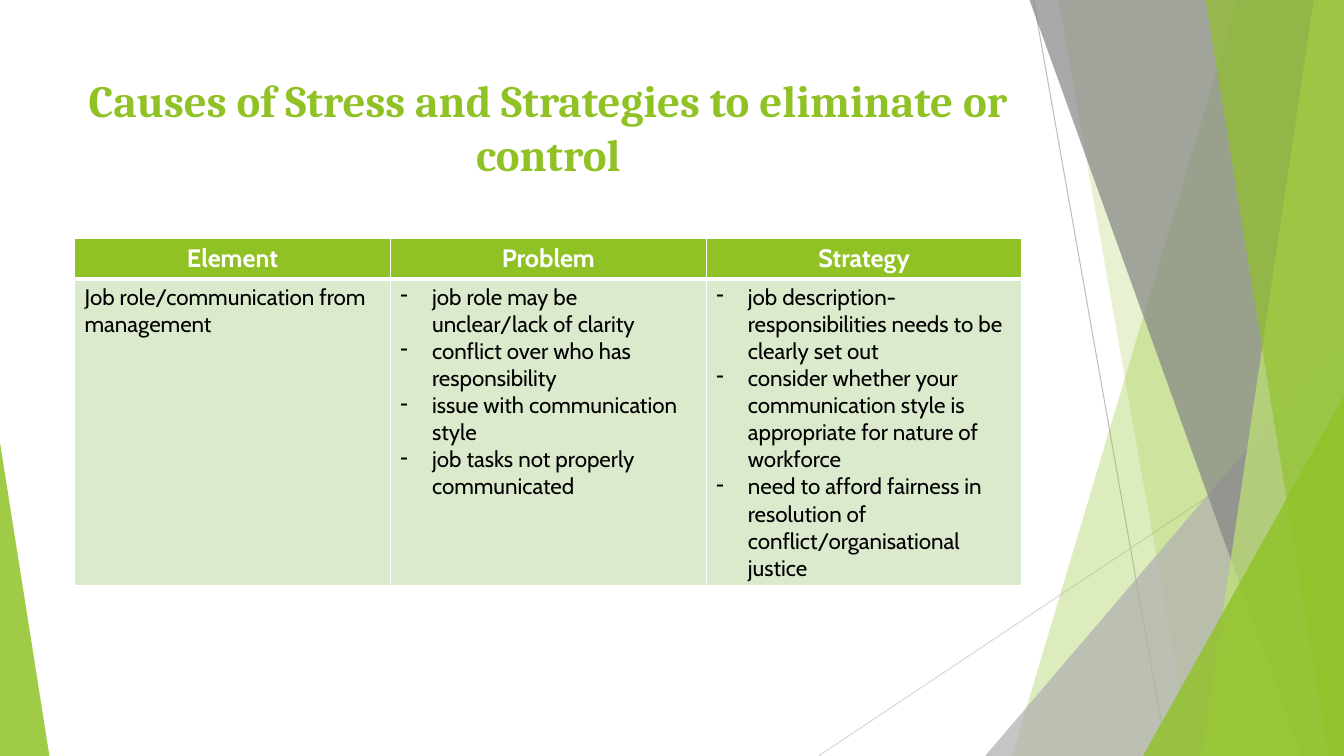
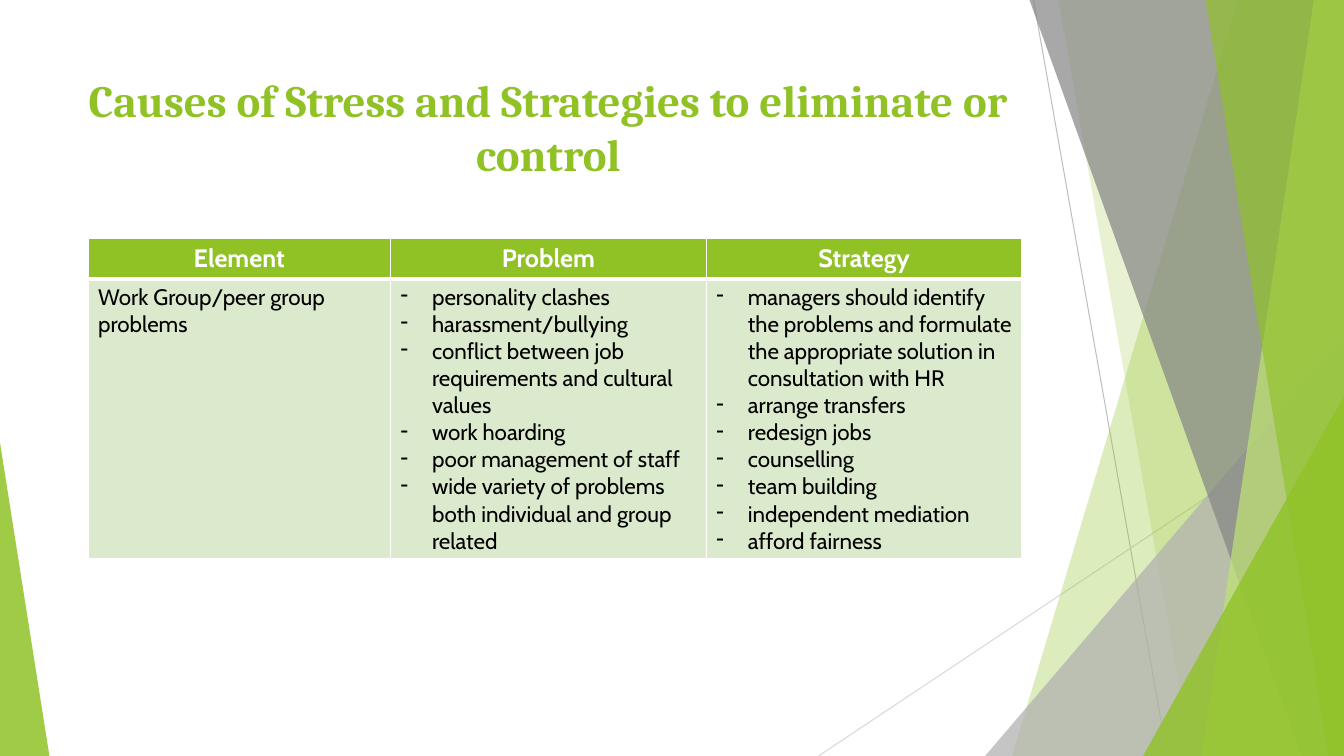
from dataclasses import dataclass

from lxml.etree import SubElement
from pptx import Presentation
from pptx.dml.color import RGBColor
from pptx.dml.fill import FillFormat
from pptx.enum.shapes import MSO_CONNECTOR, MSO_SHAPE
from pptx.enum.text import MSO_ANCHOR, PP_ALIGN
from pptx.oxml.ns import qn
from pptx.slide import Slide
from pptx.table import _Cell
from pptx.text.text import TextFrame
from pptx.util import Inches, Pt

WIDTH, HEIGHT = Inches(13.33), Inches(7.5)
GREEN, LIME, PALE = "90C226", "C0E474", "DBE9CD"
GREY, SILVER = "848484", "B0B0B0"
WHITE, BLACK = "FFFFFF", "000000"
TITLE_FONT, TABLE_FONT = "Cambria", "Cabin"

TITLE = "Causes of Stress and Strategies to eliminate or control"
HEADINGS = ("Element", "Problem", "Strategy")
TITLE_LEFT, TITLE_TOP, TITLE_WIDTH, TITLE_HEIGHT = 5.55, 8.93, 70.5, 19.2
TABLE_RIGHT, TABLE_TOP, HEADING_HEIGHT = 76.05, 31.5, 5.4
COLUMN_WIDTH, BULLET_INDENT = 23.5, 2.35


@dataclass(frozen=True)
class Ray:
    x1: float
    y1: float
    x2: float
    y2: float
    color: str


@dataclass(frozen=True)
class Band:
    top_x: float
    bottom_x: float
    color: str
    opacity: int


@dataclass(frozen=True)
class Wedge:
    left: float
    right: float
    top: float
    apex: float
    color: str
    opacity: int


@dataclass(frozen=True)
class Topic:
    element: str
    problems: tuple[str, ...]
    strategies: tuple[str, ...]
    first_width: float
    body_height: float


RAYS = (
    Ray(76.9, 0, 86.85, 100, "BFBFBF"),
    Ray(100, 53.7, 60.9, 100, "D9D9D9"),
)
FACETS = (
    Band(92.1, 75.3, GREEN, 30),
    Band(78.75, 88.65, GREEN, 20),
    Wedge(73.3, 100, 44.4, 1, SILVER, 72),
    Band(76.6, 96.85, GREY, 70),
    Band(97.75, 89.4, LIME, 70),
    Band(89.7, 98.85, GREEN, 65),
    Wedge(85.05, 100, 52.4, 1, GREEN, 80),
    Wedge(0, 3.68, 58.53, 0, GREEN, 85),
)
TOPICS = (
    Topic(
        "Job role/communication from management",
        (
            "job role may be unclear/lack of clarity",
            "conflict over who has responsibility",
            "issue with communication style",
            "job tasks not properly communicated",
        ),
        (
            "job description- responsibilities needs to be clearly set out",
            "consider whether your communication style is appropriate for nature of workforce",
            "need to afford fairness in resolution of conflict/organisational justice",
        ),
        first_width=23.5,
        body_height=40.5,
    ),
    Topic(
        "Work Group/peer group problems",
        (
            "personality clashes",
            "harassment/bullying",
            "conflict between job requirements and cultural values",
            "work hoarding",
            "poor management of staff",
            "wide variety of problems both individual and group related",
        ),
        (
            "managers should identify the problems and formulate the appropriate solution in consultation with HR",
            "arrange transfers",
            "redesign jobs",
            "counselling",
            "team building",
            "independent mediation",
            "afford fairness",
        ),
        first_width=22.5,
        body_height=37,
    ),
)


def across(percent: float) -> int:
    return round(WIDTH * percent / 100)


def down(percent: float) -> int:
    return round(HEIGHT * percent / 100)


def paint(fill: FillFormat, color: str, opacity: int = 100) -> None:
    fill.solid()
    fill.fore_color.rgb = RGBColor.from_string(color)
    if opacity < 100:
        choice = fill._xPr.find(qn("a:solidFill"))
        SubElement(choice[0], qn("a:alpha"), val=str(opacity * 1000))


def write(
    frame: TextFrame,
    texts: tuple[str, ...],
    *,
    font: str,
    size: float,
    color: str,
    bold: bool = False,
    align: PP_ALIGN = PP_ALIGN.LEFT,
    bullet: str = "",
) -> None:
    frame.word_wrap = True
    for index, text in enumerate(texts):
        para = frame.add_paragraph() if index else frame.paragraphs[0]
        para.alignment = align
        if bullet:
            properties = para._p.get_or_add_pPr()
            properties.set("marL", str(across(BULLET_INDENT)))
            properties.set("indent", str(-across(BULLET_INDENT)))
            SubElement(properties, qn("a:buChar"), char=bullet)
        span = para.add_run()
        span.text = text
        span.font.name, span.font.size, span.font.bold = font, Pt(size), bold
        paint(span.font.fill, color)


def draw_ray(page: Slide, ray: Ray) -> None:
    line = page.shapes.add_connector(
        MSO_CONNECTOR.STRAIGHT, across(ray.x1), down(ray.y1), across(ray.x2), down(ray.y2)
    )
    paint(line.line.fill, ray.color)
    line.line.width = Pt(0.75)
    SubElement(line._element.spPr, qn("a:effectLst"))


def draw_facet(page: Slide, facet: Band | Wedge) -> None:
    if isinstance(facet, Band):
        builder = page.shapes.build_freeform(across(facet.top_x), 0)
        builder.add_line_segments([(WIDTH, 0), (WIDTH, HEIGHT), (across(facet.bottom_x), HEIGHT)])
        shape = builder.convert_to_shape()
    else:
        shape = page.shapes.add_shape(
            MSO_SHAPE.ISOSCELES_TRIANGLE,
            across(facet.left),
            down(facet.top),
            across(facet.right - facet.left),
            down(100 - facet.top),
        )
        shape.adjustments[0] = facet.apex
    paint(shape.fill, facet.color, facet.opacity)
    shape.line.fill.background()
    shape.shadow.inherit = False


def draw_title(page: Slide) -> None:
    box = page.shapes.add_textbox(
        across(TITLE_LEFT), down(TITLE_TOP), across(TITLE_WIDTH), down(TITLE_HEIGHT)
    )
    box.text_frame.vertical_anchor = MSO_ANCHOR.TOP
    write(
        box.text_frame, (TITLE,), font=TITLE_FONT, size=32, color=GREEN, bold=True, align=PP_ALIGN.CENTER
    )


def style_cell(cell: _Cell, color: str, top: float, bottom: float) -> None:
    properties = cell._tc.get_or_add_tcPr()
    for side, width in (("L", 1), ("R", 1), ("T", top), ("B", bottom)):
        border = SubElement(properties, qn(f"a:ln{side}"), w=str(Pt(width)))
        choice = SubElement(border, qn("a:solidFill"))
        SubElement(choice, qn("a:srgbClr"), val=WHITE)
    paint(cell.fill, color)


def draw_table(page: Slide, topic: Topic) -> None:
    widths = (topic.first_width, COLUMN_WIDTH, COLUMN_WIDTH)
    heights = (HEADING_HEIGHT, topic.body_height)
    table = page.shapes.add_table(
        len(heights),
        len(widths),
        across(TABLE_RIGHT - sum(widths)),
        down(TABLE_TOP),
        across(sum(widths)),
        down(sum(heights)),
    ).table
    table.horz_banding = False
    for row, height in zip(table.rows, heights):
        row.height = down(height)
    bodies = ((topic.element,), topic.problems, topic.strategies)
    for index, (heading, body, width) in enumerate(zip(HEADINGS, bodies, widths)):
        table.columns[index].width = across(width)
        top_cell, body_cell = table.cell(0, index), table.cell(1, index)
        style_cell(top_cell, GREEN, top=1, bottom=3)
        style_cell(body_cell, PALE, top=3, bottom=1)
        write(
            top_cell.text_frame,
            (heading,),
            font=TABLE_FONT,
            size=18,
            color=WHITE,
            bold=True,
            align=PP_ALIGN.CENTER,
        )
        write(
            body_cell.text_frame,
            body,
            font=TABLE_FONT,
            size=16,
            color=BLACK,
            bullet="-" if index else "",
        )


def main() -> None:
    deck = Presentation()
    deck.slide_width, deck.slide_height = WIDTH, HEIGHT
    for topic in TOPICS:
        page = deck.slides.add_slide(deck.slide_layouts[6])
        for ray in RAYS:
            draw_ray(page, ray)
        for facet in FACETS:
            draw_facet(page, facet)
        draw_title(page)
        draw_table(page, topic)
    deck.save("out.pptx")


if __name__ == "__main__":
    main()
